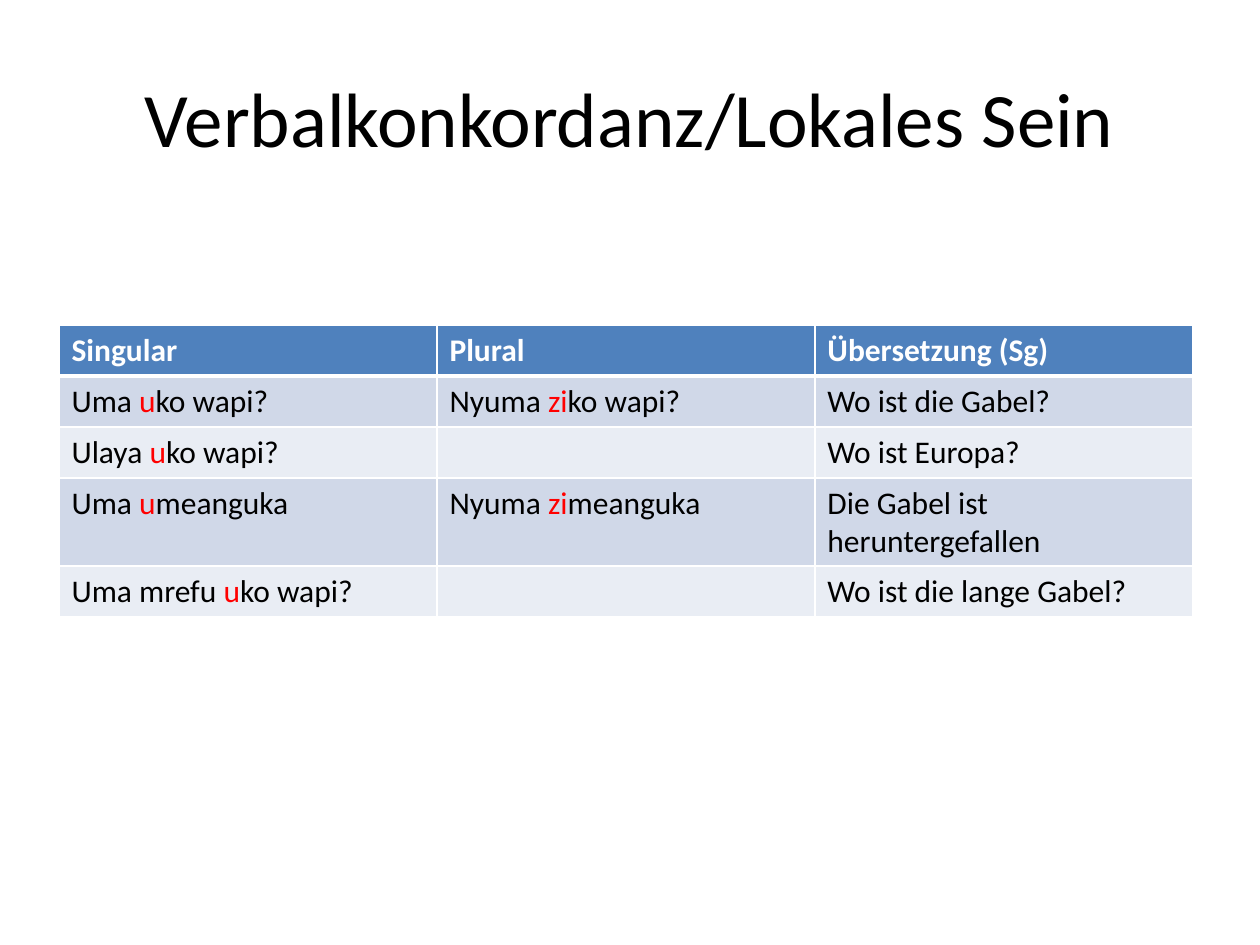
from lxml.etree import SubElement
from pptx import Presentation
from pptx.dml.color import RGBColor
from pptx.enum.text import MSO_ANCHOR, PP_ALIGN
from pptx.oxml.ns import qn
from pptx.util import Emu, Pt

PX = 914400 // 126
FONT = "Calibri"
WHITE, BLACK, RED = "FFFFFF", "000000", "FF0000"
HEADER, BANDS = "4F81BD", ("D0D8E8", "E9EDF4")
ROW_HEIGHTS = (51, 51, 51, 88, 51)
COL_WIDTH = 378

# Asterisks enclose the highlighted concord prefix.
ROWS = (
    ("Singular", "Plural", "Übersetzung (Sg)"),
    ("Uma *u*ko wapi?", "Nyuma *zi*ko wapi?", "Wo ist die Gabel?"),
    ("Ulaya *u*ko wapi?", "", "Wo ist Europa?"),
    ("Uma *u*meanguka", "Nyuma *zi*meanguka", "Die Gabel ist heruntergefallen"),
    ("Uma mrefu *u*ko wapi?", "", "Wo ist die lange Gabel?"),
)


def px(n):
    return Emu(n * PX)


def rgb(color):
    return RGBColor.from_string(color)


def set_font(p, size, color, bold=False):
    p.font.name = FONT
    p.font.size = Pt(size)
    p.font.bold = bold
    p.font.color.rgb = rgb(color)


def add_title(s, text):
    tf = s.shapes.add_textbox(px(63), px(38), px(1134), px(157)).text_frame
    tf.word_wrap = True
    tf.vertical_anchor = MSO_ANCHOR.MIDDLE
    p = tf.paragraphs[0]
    p.text = text
    p.alignment = PP_ALIGN.CENTER
    set_font(p, 44, BLACK)


def set_borders(cell, top, bottom):
    """Draw white cell borders; top and bottom are widths in points."""
    tc_pr = cell._tc.get_or_add_tcPr()
    for side, width in (("L", 1), ("R", 1), ("T", top), ("B", bottom)):
        ln = SubElement(tc_pr, qn(f"a:ln{side}"), w=str(Pt(width)))
        fill = SubElement(ln, qn("a:solidFill"))
        SubElement(fill, qn("a:srgbClr"), val=WHITE)


def fill_cell(cell, text, row):
    is_header = row == 0
    set_borders(cell, 3 if row == 1 else 1, 3 if is_header else 1)
    cell.fill.solid()
    cell.fill.fore_color.rgb = rgb(HEADER if is_header else BANDS[(row - 1) % 2])
    p = cell.text_frame.paragraphs[0]
    set_font(p, 18, WHITE if is_header else BLACK, is_header)
    for i, part in enumerate(text.split("*")):
        if part:
            r = p.add_run()
            r.text = part
            if i % 2:
                r.font.color.rgb = rgb(RED)


def add_concord_table(s):
    n_cols = len(ROWS[0])
    table = s.shapes.add_table(
        len(ROWS), n_cols, px(59), px(325),
        px(n_cols * COL_WIDTH), px(sum(ROW_HEIGHTS))).table
    for col in table.columns:
        col.width = px(COL_WIDTH)
    for row, (texts, height) in enumerate(zip(ROWS, ROW_HEIGHTS)):
        table.rows[row].height = px(height)
        for col, text in enumerate(texts):
            fill_cell(table.cell(row, col), text, row)


def main():
    prs = Presentation()
    prs.slide_width, prs.slide_height = px(1260), px(945)
    s = prs.slides.add_slide(prs.slide_layouts[6])
    add_title(s, "Verbalkonkordanz/Lokales Sein")
    add_concord_table(s)
    prs.save("out.pptx")


if __name__ == "__main__":
    main()
